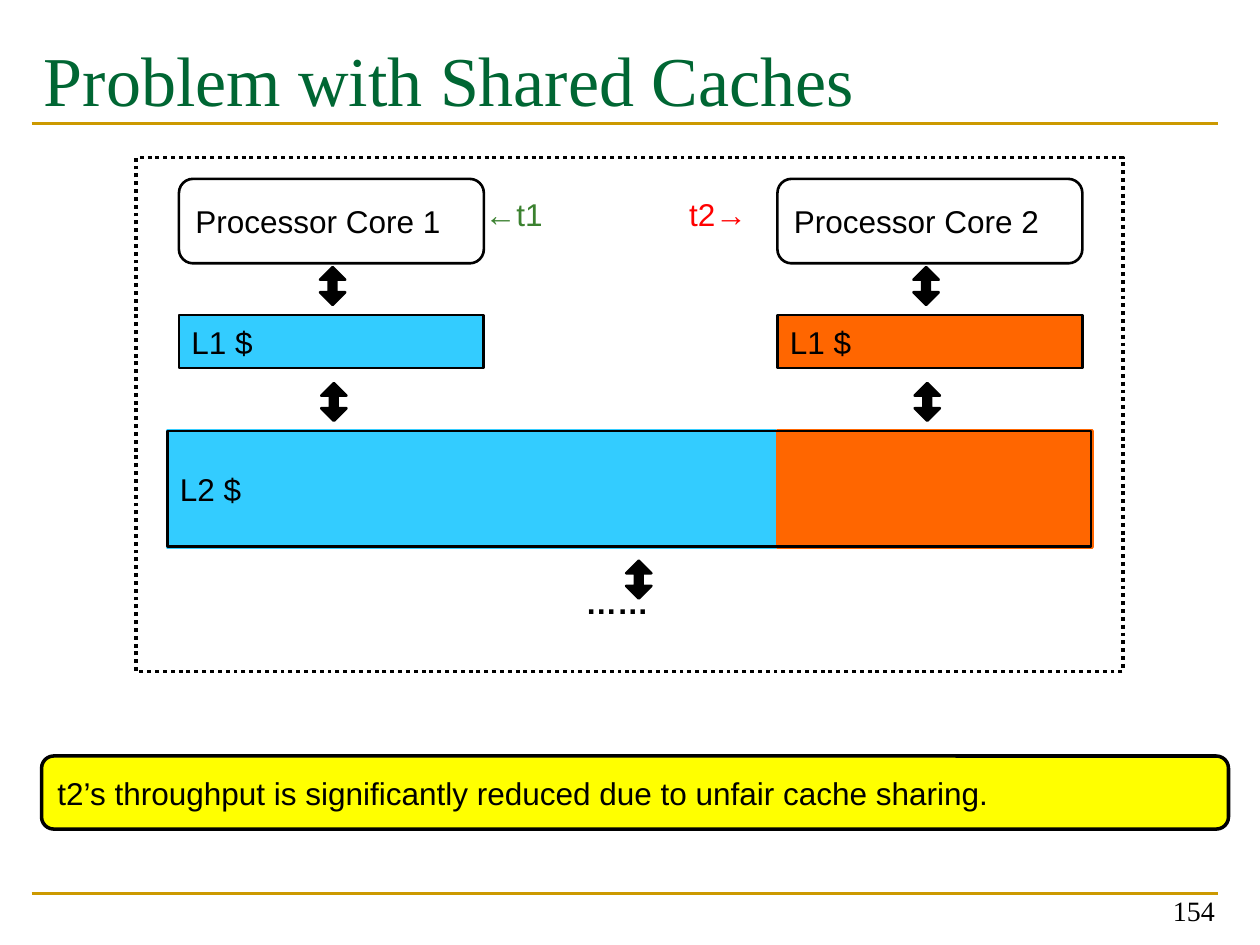
from lxml import etree
from pptx import Presentation
from pptx.dml.color import RGBColor
from pptx.enum.dml import MSO_LINE
from pptx.enum.shapes import MSO_CONNECTOR, MSO_SHAPE
from pptx.enum.text import MSO_ANCHOR, PP_ALIGN
from pptx.oxml.ns import qn
from pptx.util import Inches, Pt

RECT, ROUND = MSO_SHAPE.RECTANGLE, MSO_SHAPE.ROUNDED_RECTANGLE
ARROW = MSO_SHAPE.UP_DOWN_ARROW
TOP, MIDDLE, BOTTOM = MSO_ANCHOR.TOP, MSO_ANCHOR.MIDDLE, MSO_ANCHOR.BOTTOM
LEFT, RIGHT = PP_ALIGN.LEFT, PP_ALIGN.RIGHT
BLACK, GOLD, BLUE, ORANGE = "000000", "CC9900", "33CCFF", "FF6600"
color = RGBColor.from_string

deck = Presentation()
deck.slide_width, deck.slide_height = Inches(10), Inches(7.5)
page = deck.slides.add_slide(deck.slide_layouts[6])


def write(box, text, size=18, font="Arial", ink=BLACK, anchor=TOP,
          align=LEFT, bold=False, wrap=True):
    frame = box.text_frame
    frame.word_wrap = wrap
    frame.vertical_anchor = anchor
    para = frame.paragraphs[0]
    para.alignment = align
    span = para.add_run()
    span.text = text
    span.font.size, span.font.name, span.font.bold = Pt(size), font, bold
    span.font.color.rgb = color(ink)


def add_block(kind, place, fill=None, line=BLACK, width=1.5, text=None):
    block = page.shapes.add_shape(kind, *map(Inches, place))
    block.shadow.inherit = False
    if fill:
        block.fill.solid()
        block.fill.fore_color.rgb = color(fill)
    else:
        block.fill.background()
    block.line.color.rgb = color(line)
    block.line.width = Pt(width)
    if text:
        write(block, text, anchor=MIDDLE, wrap=False)
    return block


# Rules under the title and above the page number
for y in (7.09, 0.98):
    rule = page.shapes.add_connector(
        MSO_CONNECTOR.STRAIGHT, Inches(0.25), Inches(y), Inches(9.67), Inches(y))
    rule.line.color.rgb = color(GOLD)
    rule.line.width = Pt(1.5)
    etree.SubElement(rule._element.spPr, qn("a:effectLst"))

# Title and page number
title = page.shapes.add_textbox(Inches(0.25), Inches(0.17), Inches(9.42), Inches(1.17))
title.text_frame.margin_top = Inches(0.12)
write(title, "Problem with Shared Caches", 40, "Times New Roman", "006633")
number = page.shapes.add_textbox(Inches(7.41), Inches(6.91), Inches(2.33), Inches(0.5))
write(number, "154", 16, "Times New Roman", anchor=BOTTOM, align=RIGHT)

# Shared L2 cache: the two shares, then the outline
add_block(RECT, (1.33, 3.42, 4.83, 0.92), BLUE, BLUE, 2)
add_block(RECT, (6.17, 3.42, 2.5, 0.92), ORANGE, ORANGE, 2)
add_block(RECT, (1.33, 3.42, 7.33, 0.92), text="L2 $")

# Chip boundary
chip = add_block(RECT, (1.08, 1.25, 7.83, 4.08), width=2.25)
chip.line.dash_style = MSO_LINE.ROUND_DOT

# Processor cores with their private L1 caches
for x, name, fill in ((1.42, "Processor Core 1", BLUE), (6.17, "Processor Core 2", ORANGE)):
    add_block(ROUND, (x, 1.42, 2.42, 0.67), text=name)
    add_block(RECT, (x, 2.5, 2.42, 0.42), fill, text="L1 $")

# Arrows between the levels
for x, y in ((2.54, 2.12), (7.25, 2.12), (2.55, 3.04), (7.26, 3.04), (4.97, 4.45)):
    arrow = add_block(ARROW, (x, y, 0.2, 0.3), BLACK)
    arrow.adjustments[0] = 0.5
    arrow.adjustments[1] = 0.3

# Thread labels and the levels further down
for x, y, w, text, ink, bold in (
        (3.75, 1.5, 0.88, "←t1", "3B812F", False),
        (5.37, 1.5, 0.88, "t2→", "FF0000", False),
        (4.55, 4.58, 1.03, "……", BLACK, True)):
    label = page.shapes.add_textbox(Inches(x), Inches(y), Inches(w), Inches(0.5))
    write(label, text, ink=ink, bold=bold)

# Conclusion
add_block(ROUND, (0.33, 6, 9.42, 0.58), "FFFF00", width=2,
          text="t2’s throughput is significantly reduced due to unfair cache sharing.")

deck.save("out.pptx")
